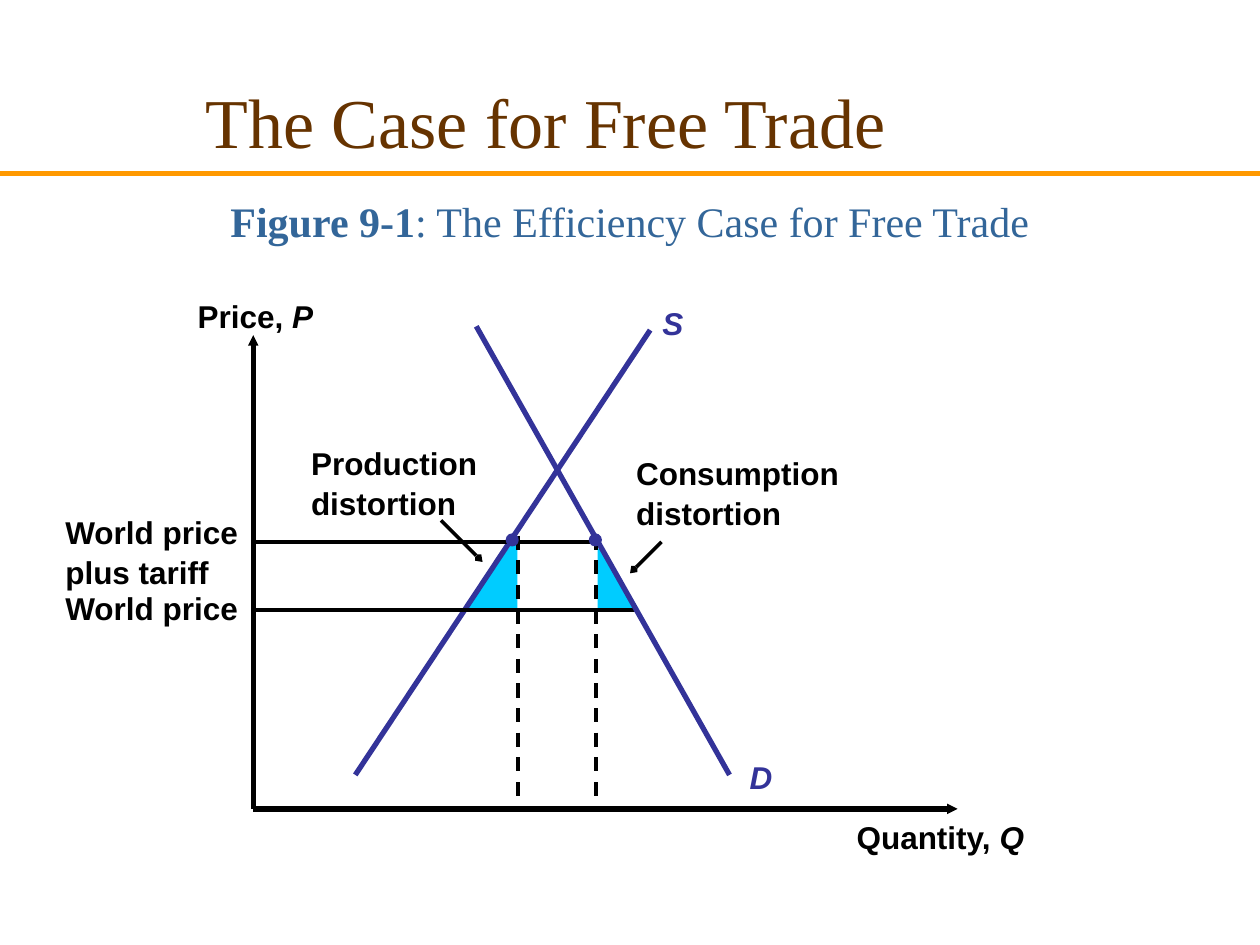
from pptx import Presentation
from pptx.dml.color import RGBColor as Rgb
from pptx.enum.dml import MSO_LINE as Dash
from pptx.enum.shapes import MSO_CONNECTOR as Conn, MSO_SHAPE as Kind
from pptx.enum.text import MSO_ANCHOR as Anchor, MSO_AUTO_SIZE as Fit, PP_ALIGN as Align
from pptx.oxml.ns import qn
from pptx.util import Inches, Pt
from lxml.etree import SubElement as Sub

HUE = {"ink": "000000", "curve": "333399", "loss": "00CCFF",
       "rule": "FF9900", "title": "663300", "sub": "336699"}
COLS, ROWS = 100, 75
SANS, SERIF = "Arial", "Times New Roman"


def cell(n):
    """Turn grid cells into a length."""
    return Inches(round(n / 10, 2))


def tint(hue):
    """Look up a colour."""
    return Rgb.from_string(HUE[hue])


def write(par, text, hue, **form):
    """Add a run with the given font values."""
    font = par.add_run()
    font.text = text
    font = font.font
    font.color.rgb = tint(hue)
    for key, val in form.items():
        setattr(font, key, val)


def line(slide, ends, hue="ink", width=2, head=None, dash=None):
    """Draw a line between two grid points, with an optional arrowhead."""
    (x1, y1), (x2, y2) = ends
    link = slide.shapes.add_connector(
        Conn.STRAIGHT, cell(x1), cell(y1), cell(x2), cell(y2))
    link.line.color.rgb = tint(hue)
    link.line.width = Pt(width)
    if dash:
        link.line.dash_style = dash
    props = link._element.spPr
    if head:
        Sub(props.find(qn("a:ln")), qn("a:tailEnd"), type=head, w="sm", len="sm")
    Sub(props, qn("a:effectLst"))


def solid(slide, kind, box, hue, flip=False):
    """Draw a filled shape in a grid box."""
    shape = slide.shapes.add_shape(kind, *map(cell, box))
    shape.shadow.inherit = False
    shape.fill.solid()
    shape.fill.fore_color.rgb = shape.line.color.rgb = tint(hue)
    shape.line.width = Pt(1)
    if flip:
        shape._element.spPr.find(qn("a:xfrm")).set("flipH", "1")


def label(slide, box, rows, hue="ink"):
    """Write bold lines, each a plain part and an italic part."""
    frame = slide.shapes.add_textbox(*map(cell, box)).text_frame
    frame.word_wrap = False
    frame.auto_size = Fit.SHAPE_TO_FIT_TEXT
    for i, (plain, slant) in enumerate(rows):
        par = frame.add_paragraph() if i else frame.paragraphs[0]
        par.line_spacing = 1.05
        for text, ital in ((plain, False), (slant, True)):
            if text:
                write(par, text, hue, name=SANS, size=Pt(18), bold=True, italic=ital)


def heading(slide, box):
    """Set the title with its rule and the figure caption."""
    x, y, w, h = box
    line(slide, [(x, y + 13.8), (x + w, y + 13.8)], "rule", 3)
    title = slide.shapes.title
    note = slide.shapes.add_textbox(cell(x), cell(y + 7.5), cell(w), cell(h - 7.5))
    spot = dict(left=x + 0.8, top=y + 3.3, width=0.85 * w, height=12.5)
    for key, val in spot.items():
        setattr(title, key, cell(val))
    for shape, anchor in ((title, Anchor.MIDDLE), (note, Anchor.BOTTOM)):
        frame = shape.text_frame
        frame.word_wrap = True
        frame.auto_size = Fit.NONE
        frame.vertical_anchor = anchor
        frame.paragraphs[0].alignment = Align.CENTER
    write(title.text_frame.paragraphs[0], "The Case for Free Trade", "title",
          name=SERIF, size=Pt(40))
    for text, bold in (("Figure 9-1", True),
                       (": The Efficiency Case for Free Trade", False)):
        write(note.text_frame.paragraphs[0], text, "sub",
              name=SERIF, size=Pt(24), bold=bold)


def market(slide, box):
    """Draw the supply and demand plot, measured up from the axes' corner."""
    left, top, wide, high = box
    world, tariff, made, used = 15.8, 21.2, 21, 27.2

    def pin(x, y, *size):
        return (left + x, top + high - y, *size)

    def draw(start, end, **form):
        line(slide, [pin(*start), pin(*end)], **form)

    for tip in ((0, high), (wide, 0)):
        draw((0, 0), tip, width=3, head="triangle")
    solid(slide, Kind.RIGHT_TRIANGLE, pin(16.7, 21.4, 4.2, 5.6), "loss", True)
    solid(slide, Kind.RIGHT_TRIANGLE, pin(27.4, 20.6, 3.1, 4.7), "loss")
    draw((31.5, 38), (8.1, 2.7), hue="curve", width=3)
    draw((0, world), (30.3, world))
    draw((17.7, 38.3), (37.8, 2.7), hue="curve", width=3)
    for start, end in (((32.4, 21.2), (29.9, 18.7)), ((14.9, 22.9), (18.2, 19.6))):
        draw(start, end, head="arrow")
    for x in (made, used):
        draw((x, 21.7), (x, 0), dash=Dash.DASH)
    draw((0, tariff), (27.4, tariff))
    for x in (26.7, 20.1):
        solid(slide, Kind.OVAL, pin(x, 21.8, 0.9, 0.9), "curve")

    for spot, rows, hue in (
        ((-15.9, 24.1, 15.8, 7), [("World price", ""), ("plus tariff", "")], "ink"),
        ((-15.9, 18.1, 15.8, 4), [("World price", "")], "ink"),
        ((-5.4, 41.3, 11.2, 4), [("Price, ", "P")], "ink"),
        ((46.9, -0.1, 15.5, 4), [("Quantity, ", "Q")], "ink"),
        ((31.5, 40.7, 3.7, 4), [("", "S")], "curve"),
        ((38.4, 4.7, 3.8, 4), [("", "D")], "curve"),
        ((29.4, 28.8, 18.1, 7), [("Consumption", ""), ("distortion", "")], "ink"),
        ((3.6, 29.6, 15.2, 7), [("Production", ""), ("distortion", "")], "ink"),
    ):
        label(slide, pin(*spot), rows, hue)


def main():
    """Build and save the slide."""
    deck = Presentation()
    deck.slide_width, deck.slide_height = cell(COLS), cell(ROWS)
    slide = deck.slides.add_slide(deck.slide_layouts[5])
    heading(slide, (0, 0, COLS, 20))
    market(slide, (20.1, 26.6, 55.9, 37.6))
    deck.save("out.pptx")


if __name__ == "__main__":
    main()
